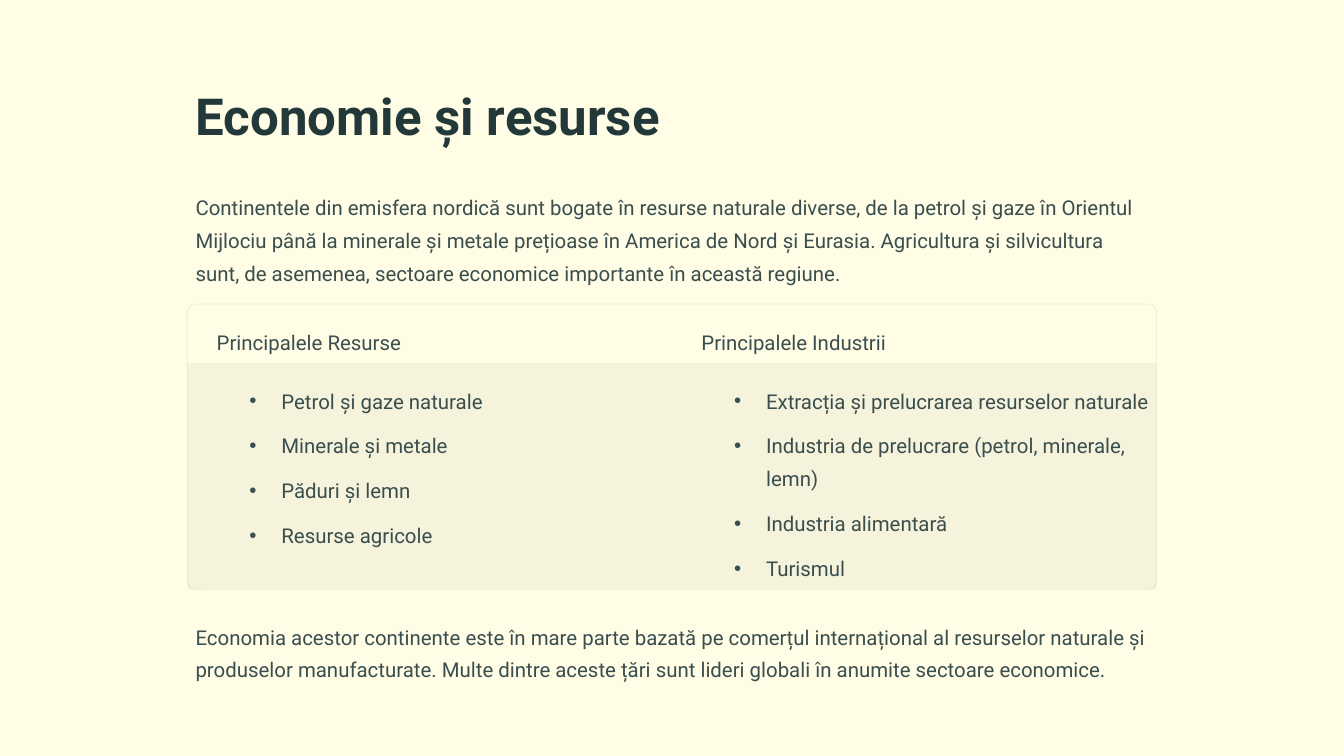
import pptx
import pptx.util
import pptx.dml.color
import pptx.enum.shapes
import pptx.enum.text
import lxml.etree
from pptx.oxml.ns import qn

Inches, Pt = pptx.util.Inches, pptx.util.Pt
SHAPES = pptx.enum.shapes.MSO_SHAPE
LEFT, WIDTH = 2.23, 11.54
COLUMN = WIDTH / 2
INDENT = 0.38
BODY = {"name": "Roboto", "size": Pt(17.5), "bold": False}
TITLE = {"name": "Roboto", "size": Pt(43.7), "bold": True}


def color(hex_value):
    return pptx.dml.color.RGBColor.from_string(hex_value)


def write(box, place, lines, font=BODY, ink="3B4E4E", spacing=28, bullets=False):
    """Place a text box or placeholder and fill it with one paragraph per line."""
    box.left, box.top, box.width, box.height = map(Inches, place)
    frame = box.text_frame
    frame.word_wrap = True
    frame.auto_size = pptx.enum.text.MSO_AUTO_SIZE.NONE
    frame.vertical_anchor = pptx.enum.text.MSO_ANCHOR.TOP
    for number, line in enumerate(lines):
        para = frame.add_paragraph() if number else frame.paragraphs[0]
        para.alignment = pptx.enum.text.PP_ALIGN.LEFT
        para.line_spacing = Pt(spacing)
        para.space_before = Pt(0)
        para.space_after = Pt(10.4 if bullets else 0)
        span = para.add_run()
        span.text = line
        for name, value in font.items():
            setattr(span.font, name, value)
        span.font.color.rgb = color(ink)
        if bullets:
            props = para._p.get_or_add_pPr()
            props.set("marL", str(Inches(INDENT)))
            props.set("indent", str(-Inches(INDENT)))
            lxml.etree.SubElement(props, qn("a:buChar")).set("char", "•")


deck = pptx.Presentation()
deck.slide_width, deck.slide_height = Inches(16), Inches(9)
page = deck.slides.add_slide(deck.slide_layouts.get_by_name("Comparison"))
page.background.fill.solid()
page.background.fill.fore_color.rgb = color("FFFDE6")

# Panels sit behind the text: kind, top, height, fill, line, opacity in percent
panels = [
    (SHAPES.ROUNDED_RECTANGLE, 3.62, 3.4, None, "000000", 8),
    (SHAPES.RECTANGLE, 3.62, 0.7, "FFFFFF", None, 4),
    (SHAPES.RECTANGLE, 4.32, 2.69, "000000", None, 4),
]
for layer, (kind, top, height, fill, line, opacity) in enumerate(panels):
    panel = page.shapes.add_shape(kind, Inches(LEFT), Inches(top), Inches(WIDTH), Inches(height))
    panel.shadow.inherit = False
    if fill:
        panel.fill.solid()
        panel.fill.fore_color.rgb = color(fill)
        panel.line.fill.background()
    else:
        panel.adjustments[0] = 0.03
        panel.fill.background()
        panel.line.width = Pt(0.6)
        panel.line.color.rgb = color(line)
    tint = panel.element.spPr.find(".//" + qn("a:srgbClr"))
    lxml.etree.SubElement(tint, qn("a:alpha")).set("val", str(opacity * 1000))
    page.shapes.element.insert(2 + layer, panel.element)

write(page.shapes.title, (LEFT, 0.93, WIDTH, 0.76), ["Economie și resurse"],
      TITLE, "233939", 54.7)

columns = [
    ("Principalele Resurse",
     ["Petrol și gaze naturale", "Minerale și metale", "Păduri și lemn", "Resurse agricole"]),
    ("Principalele Industrii",
     ["Extracția și prelucrarea resurselor naturale",
      "Industria de prelucrare (petrol, minerale, lemn)",
      "Industria alimentară", "Turismul"]),
]
holders = {holder.placeholder_format.idx: holder for holder in page.placeholders}
for number, (heading, items) in enumerate(columns):
    left = LEFT + number * COLUMN
    write(holders[1 + 2 * number], (left + 0.25, 3.78, 5.27, 0.39), [heading])
    write(holders[2 + 2 * number], (left + 0.64, 4.48, 5.2, 2.4), items, bullets=True)

paragraphs = [
    (2.18, 1.17, "Continentele din emisfera nordică sunt bogate în resurse naturale diverse, "
     "de la petrol și gaze în Orientul Mijlociu până la minerale și metale prețioase în "
     "America de Nord și Eurasia. Agricultura și silvicultura sunt, de asemenea, sectoare "
     "economice importante în această regiune."),
    (7.29, 0.78, "Economia acestor continente este în mare parte bazată pe comerțul "
     "internațional al resurselor naturale și produselor manufacturate. Multe dintre aceste "
     "țări sunt lideri globali în anumite sectoare economice."),
]
for top, height, words in paragraphs:
    write(page.shapes.add_textbox(0, 0, 0, 0), (LEFT, top, WIDTH, height), [words])

deck.save("out.pptx")
